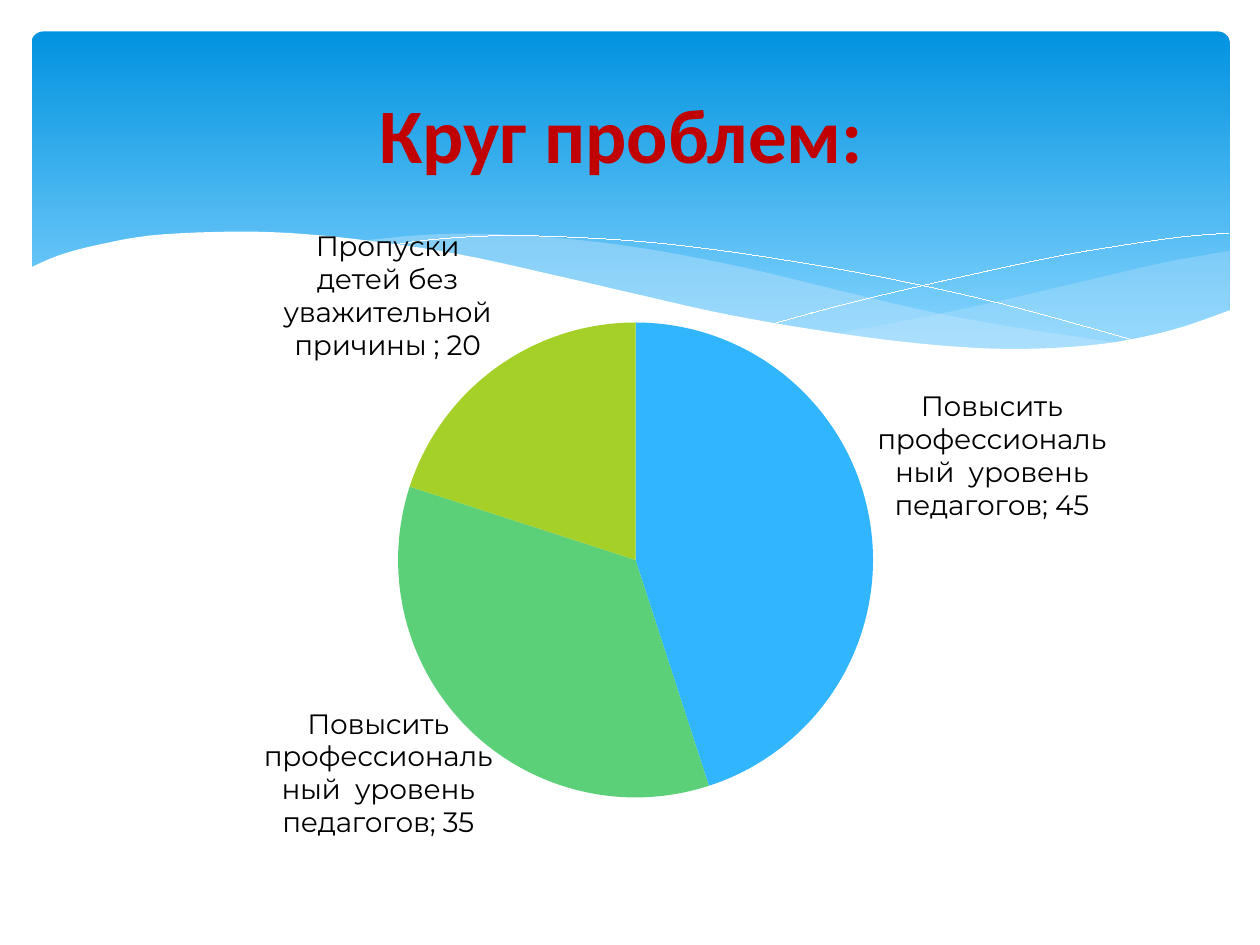
from copy import deepcopy

from lxml import etree
from pptx import Presentation
from pptx.chart.data import CategoryChartData
from pptx.dml.color import RGBColor
from pptx.enum.chart import XL_CHART_TYPE, XL_LABEL_POSITION
from pptx.enum.shapes import MSO_SHAPE
from pptx.enum.text import MSO_ANCHOR, PP_ALIGN
from pptx.oxml import parse_xml
from pptx.oxml.ns import nsdecls, qn
from pptx.util import Inches, Pt

PIE = XL_CHART_TYPE.PIE
OUTSIDE_END = XL_LABEL_POSITION.OUTSIDE_END
ROUNDED = MSO_SHAPE.ROUNDED_RECTANGLE
MIDDLE = MSO_ANCHOR.MIDDLE
CENTER = PP_ALIGN.CENTER

WHITE = RGBColor(0xFF, 0xFF, 0xFF)
BLACK = RGBColor(0x00, 0x00, 0x00)
DARK_RED = RGBColor(0xC0, 0x00, 0x00)
SKY_TOP = RGBColor(0x02, 0x93, 0xE0)
SKY_BOTTOM = RGBColor(0x83, 0xD3, 0xFE)
PALE_BLUE = RGBColor(0xC6, 0xE7, 0xFC)
SLICE_COLORS = [RGBColor(0x31, 0xB6, 0xFD), RGBColor(0x45, 0x84, 0xD3),
                RGBColor(0x5B, 0xD0, 0x78), RGBColor(0xA5, 0xD0, 0x28)]

NO_BREAK_SPACE = chr(160)
SKILL = "Повысить профессиональный  уровень педагогов"
ABSENCE = f"Пропуски детей{NO_BREAK_SPACE}без уважительной причины "
PROBLEMS = [(SKILL, 45), ("", None), (SKILL, 35), (ABSENCE, 20)]

CHART_LEFT, CHART_TOP, CHART_WIDTH, CHART_HEIGHT = 0.23, 1.56, 9.38, 5.63
PIE_LEFT, PIE_TOP, PIE_SIZE = 3.16, 2.56, 3.77

# Each wave is a list of edges; every edge is a smooth curve through its points.
RIGHT_WAVE = [
    [(9.76, 1.99), (9.21, 2.09), (8.61, 2.23), (7.79, 2.42), (7.06, 2.57), (6.61, 2.65)],
    [(6.61, 2.65), (7.18, 2.72), (7.69, 2.77), (8.14, 2.78), (8.63, 2.75), (9.05, 2.69),
     (9.42, 2.59), (9.76, 2.47)],
]
MIDDLE_WAVE = [
    [(8.93, 2.73), (8.07, 2.6), (7.41, 2.48), (6.68, 2.31), (5.98, 2.14), (5.28, 2),
     (4.65, 1.91), (3.99, 1.86), (3.44, 1.86), (2.86, 1.91)],
    [(2.86, 1.91), (3.62, 2.03), (4.49, 2.22), (5.3, 2.4), (6.01, 2.55), (6.8, 2.68),
     (7.48, 2.76), (8.07, 2.78), (8.57, 2.77), (8.93, 2.73)],
]
FALLING_LINE = [
    [(3.09, 1.95), (3.44, 1.9), (4.01, 1.87), (4.69, 1.89), (5.33, 1.94), (6.08, 2.04),
     (6.95, 2.19), (7.95, 2.41), (9.07, 2.72)],
]
RISING_LINE = [
    [(6.13, 2.57), (6.72, 2.41), (7.48, 2.23), (8.36, 2.04), (8.95, 1.94), (9.38, 1.88),
     (9.75, 1.85)],
]
WHITE_WAVE = [
    [(9.77, 2.46), (9.3, 2.62), (8.75, 2.73), (8.09, 2.77), (7.44, 2.74), (6.68, 2.65),
     (5.79, 2.5), (5.03, 2.33), (4.47, 2.2), (3.65, 2.02), (2.92, 1.91), (2.3, 1.85),
     (1.77, 1.84), (1.19, 1.87), (0.75, 1.95), (0.46, 2.03), (0.23, 2.13)],
    [(0.23, 3.29), (9.77, 3.29)],
]


def smooth(knots, steps=5):
    """Return points of a Catmull-Rom curve through the knots."""
    if len(knots) < 3:
        return knots
    padded = [knots[0], *knots, knots[-1]]
    points = [knots[0]]
    for a, b, c, d in zip(padded, padded[1:], padded[2:], padded[3:]):
        for step in range(1, steps + 1):
            t = step / steps
            points.append(tuple(
                (2 * q + (r - p) * t + (2 * p - 5 * q + 4 * r - s) * t ** 2
                 + (3 * q - p - 3 * r + s) * t ** 3) / 2
                for p, q, r, s in zip(a, b, c, d)))
    return points


def add_curve(slide, edges, closed):
    points = [(Inches(x), Inches(y)) for edge in edges for x, y in smooth(edge)]
    builder = slide.shapes.build_freeform(*points[0])
    builder.add_line_segments(points[1:], close=closed)
    curve = builder.convert_to_shape()
    curve.shadow.inherit = False
    return curve


def add_wave(slide, edges, color, opacity=100):
    wave = add_curve(slide, edges, closed=True)
    wave.line.fill.background()
    wave.fill.solid()
    wave.fill.fore_color.rgb = color
    if opacity < 100:
        color_element = wave.fill._xPr.find(qn("a:solidFill"))[0]
        etree.SubElement(color_element, qn("a:alpha"), val=str(opacity * 1000))


def add_hairline(slide, edges):
    hairline = add_curve(slide, edges, closed=False)
    hairline.fill.background()
    hairline.line.color.rgb = WHITE
    hairline.line.width = Pt(0.01)


def add_sky(slide):
    sky = slide.shapes.add_shape(ROUNDED, Inches(0.25), Inches(0.25),
                                 Inches(9.51), Inches(2.7))
    sky.adjustments[0] = 0.034
    sky.shadow.inherit = False
    sky.line.fill.background()
    sky.fill.gradient()
    sky.fill.gradient_angle = 270
    for stop, color, position in zip(sky.fill.gradient_stops,
                                     (SKY_TOP, SKY_BOTTOM), (0, 0.9)):
        stop.color.rgb = color
        stop.position = position


def add_title(slide, text):
    box = slide.shapes.add_textbox(Inches(0.5), Inches(0.37), Inches(9), Inches(1.37))
    frame = box.text_frame
    frame.word_wrap = True
    frame.vertical_anchor = MIDDLE
    para = frame.paragraphs[0]
    para.alignment = CENTER
    span = para.add_run()
    span.text = text
    span.font.name = "Calibri"
    span.font.size = Pt(44)
    span.font.bold = True
    span.font.color.rgb = DARK_RED


def manual_layout(**settings):
    values = "".join(f'<c:{name} val="{value}"/>' for name, value in settings.items())
    return parse_xml(f'<c:layout {nsdecls("c")}><c:manualLayout>{values}'
                     '</c:manualLayout></c:layout>')


def place_pie(chart):
    plot_area = chart._chartSpace.chart.plotArea
    for old in plot_area.findall(qn("c:layout")):
        plot_area.remove(old)
    plot_area.insert(0, manual_layout(
        layoutTarget="inner", xMode="edge", yMode="edge",
        x=(PIE_LEFT - CHART_LEFT) / CHART_WIDTH, y=(PIE_TOP - CHART_TOP) / CHART_HEIGHT,
        w=PIE_SIZE / CHART_WIDTH, h=PIE_SIZE / CHART_HEIGHT))


def shift_label(labels, index, right, down):
    """Move one label by inches from its automatic place."""
    group = labels._element
    label = parse_xml(f'<c:dLbl {nsdecls("c")}><c:idx val="{index}"/></c:dLbl>')
    label.append(manual_layout(x=right / CHART_WIDTH, y=down / CHART_HEIGHT))
    for name in ("txPr", "dLblPos", "showLegendKey", "showVal", "showCatName",
                 "showSerName", "showPercent", "showBubbleSize", "separator"):
        setting = group.find(qn(f"c:{name}"))
        if setting is not None:
            label.append(deepcopy(setting))
    group.insert(0, label)


def style_labels(labels):
    labels.show_value = True
    labels.show_category_name = True
    labels.show_percentage = False
    labels.show_legend_key = False
    labels.position = OUTSIDE_END
    labels.font.name = "Montserrat"
    labels.font.size = Pt(16)
    labels.font.color.rgb = BLACK
    separator = parse_xml(f'<c:separator {nsdecls("c")}>; </c:separator>')
    flags = [child for child in labels._element if child.tag.startswith(qn("c:show"))]
    flags[-1].addnext(separator)
    shift_label(labels, 2, right=0.24, down=-0.2)


def add_problem_pie(slide):
    data = CategoryChartData()
    data.categories = [name for name, _ in PROBLEMS]
    data.add_series("Series 1", [value for _, value in PROBLEMS])
    chart = slide.shapes.add_chart(PIE, Inches(CHART_LEFT), Inches(CHART_TOP),
                                   Inches(CHART_WIDTH), Inches(CHART_HEIGHT), data).chart
    chart.has_title = False
    chart.has_legend = False
    chart.font.name = "Calibri"
    chart.font.size = Pt(10)
    chart.font.color.rgb = BLACK
    place_pie(chart)

    plot = chart.plots[0]
    plot.vary_by_categories = True
    for index, color in enumerate(SLICE_COLORS):
        slice_format = plot.series[0].points[index].format
        slice_format.fill.solid()
        slice_format.fill.fore_color.rgb = color
        slice_format.line.fill.background()
    style_labels(plot.series[0].data_labels)


def main():
    deck = Presentation()
    deck.slide_width = Inches(10)
    deck.slide_height = Inches(7.5)
    slide = deck.slides.add_slide(deck.slide_layouts[6])
    add_sky(slide)
    add_wave(slide, RIGHT_WAVE, PALE_BLUE, opacity=29)
    add_wave(slide, MIDDLE_WAVE, PALE_BLUE, opacity=40)
    add_hairline(slide, FALLING_LINE)
    add_hairline(slide, RISING_LINE)
    add_wave(slide, WHITE_WAVE, WHITE)
    add_title(slide, "Круг проблем: ")
    add_problem_pie(slide)
    deck.save("out.pptx")


if __name__ == "__main__":
    main()
